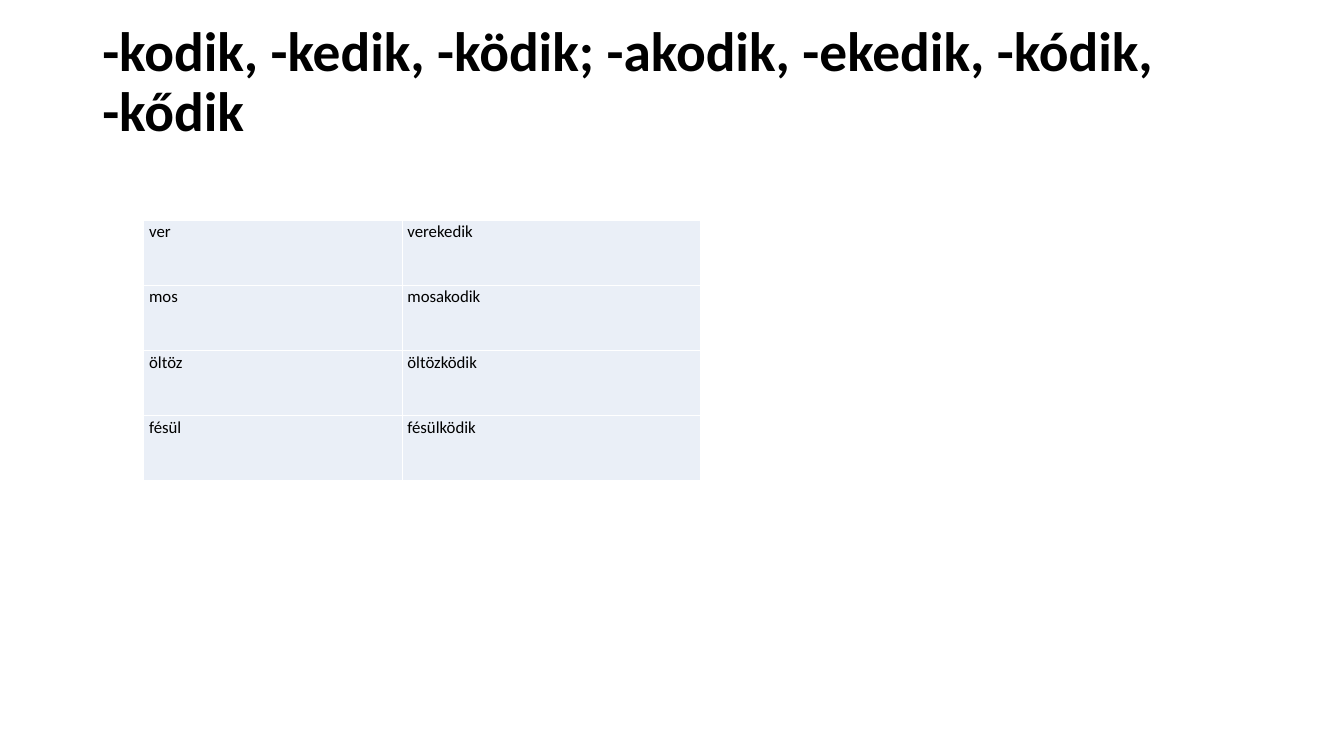
"""Build a slide on Hungarian reflexive verb suffixes with a table of verb pairs."""
from dataclasses import dataclass

from lxml import etree
from pptx import Presentation
from pptx.dml.color import RGBColor
from pptx.enum.text import MSO_ANCHOR
from pptx.oxml.ns import qn
from pptx.util import Pt

PX = 9525
MIDDLE = MSO_ANCHOR.MIDDLE
FONT = "Calibri"
COLORS = {"text": "000000", "cell": "EAEFF7", "border": "FFFFFF"}
TITLE = "-kodik, -kedik, -ködik; -akodik, -ekedik, -kódik, -kődik"
COL_WIDTHS = (246, 284)
ROW_HEIGHT = 62


@dataclass
class VerbPair:
    base: str
    reflexive: str


PAIRS = [
    VerbPair("ver", "verekedik"),
    VerbPair("mos", "mosakodik"),
    VerbPair("öltöz", "öltözködik"),
    VerbPair("fésül", "fésülködik"),
]


def px(n: int) -> int:
    return n * PX


def set_text(tf, text: str, size: float, spacing: float, bold: bool = False) -> None:
    tf.text = text
    p = tf.paragraphs[0]
    p.line_spacing = spacing
    font = p.runs[0].font
    font.name, font.size, font.bold = FONT, Pt(size), bold
    font.color.rgb = RGBColor.from_string(COLORS["text"])


def add_title(slide) -> None:
    sp = slide.shapes.add_textbox(px(88), px(38), px(1104), px(139))
    tf = sp.text_frame
    tf.word_wrap = True
    tf.vertical_anchor = MIDDLE
    tf.margin_bottom = px(61)
    set_text(tf, TITLE, 39.6, 0.9, bold=True)


def style_cell(cell, text: str) -> None:
    cell.margin_left = cell.margin_right = px(5)
    cell.margin_top = cell.margin_bottom = 0
    set_text(cell.text_frame, text, 12, 1.07)
    tc_pr = cell._tc.get_or_add_tcPr()
    for side in ("a:lnL", "a:lnR", "a:lnT", "a:lnB"):
        ln = etree.SubElement(tc_pr, qn(side), w=str(Pt(1)))
        fill = etree.SubElement(ln, qn("a:solidFill"))
        etree.SubElement(fill, qn("a:srgbClr"), val=COLORS["border"])
    cell.fill.solid()
    cell.fill.fore_color.rgb = RGBColor.from_string(COLORS["cell"])


def add_verb_table(slide, pairs: list[VerbPair]) -> None:
    frame = slide.shapes.add_table(
        len(pairs), len(COL_WIDTHS), px(137), px(210),
        px(sum(COL_WIDTHS)), px(ROW_HEIGHT * len(pairs)))
    table = frame.table
    table.first_row = table.horz_banding = False
    for col, width in zip(table.columns, COL_WIDTHS):
        col.width = px(width)
    for row, pair in zip(table.rows, pairs):
        row.height = px(ROW_HEIGHT)
        for cell, text in zip(row.cells, (pair.base, pair.reflexive)):
            style_cell(cell, text)


def main() -> None:
    prs = Presentation()
    prs.slide_width, prs.slide_height = px(1280), px(720)
    slide = prs.slides.add_slide(prs.slide_layouts[6])
    add_title(slide)
    add_verb_table(slide, PAIRS)
    prs.save("out.pptx")


if __name__ == "__main__":
    main()
